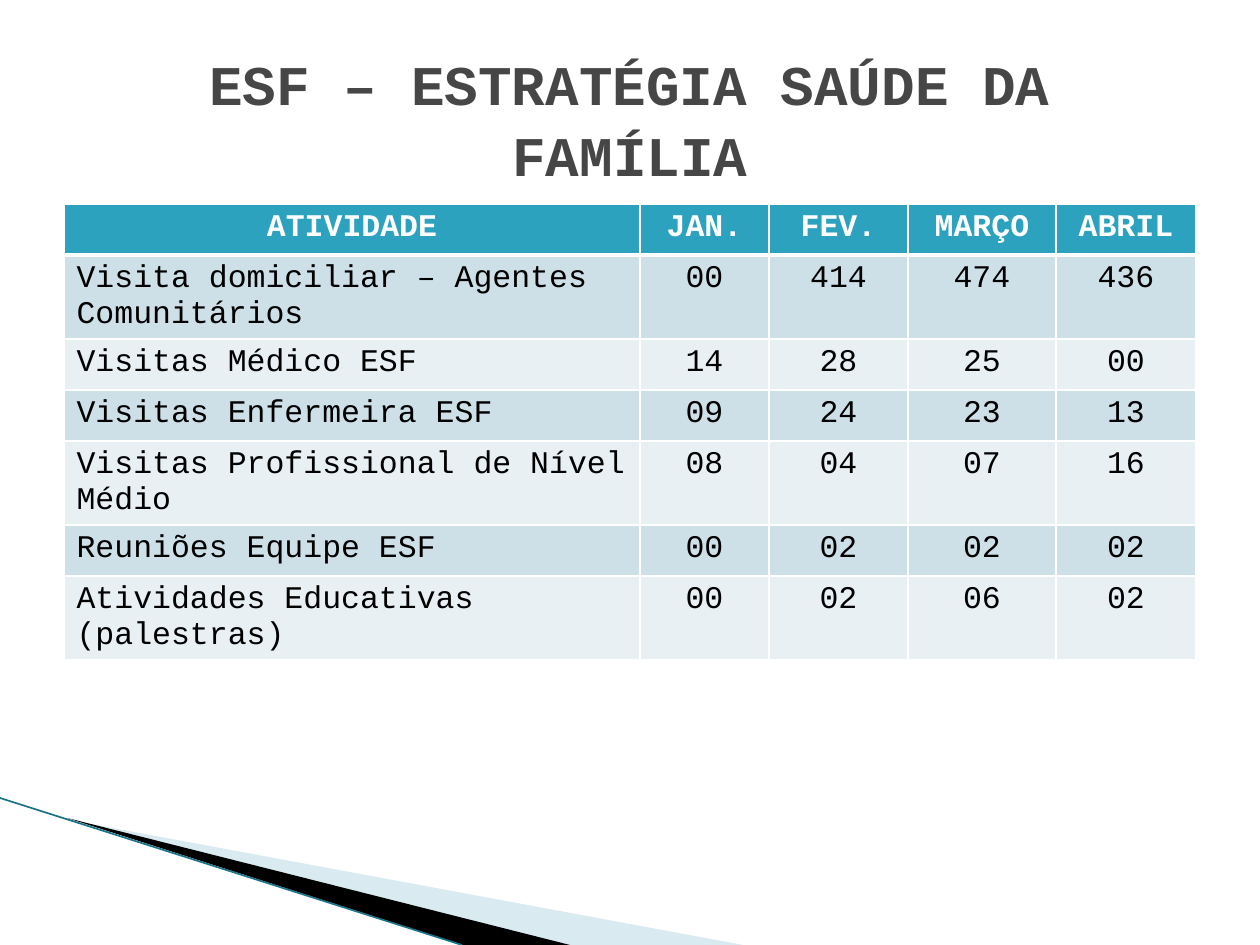
import pptx
import pptx.util
import pptx.dml.color
import pptx.enum.shapes
import pptx.enum.text
import pptx.oxml
import pptx.oxml.ns

SCALE = 914400 / 126  # EMU per px
FONT = "Courier New"
COLORS = {
    "title": "464646", "header": "2DA2BF", "band_dark": "CDE0E8",
    "band_light": "E8F0F4", "white": "FFFFFF", "black": "000000",
    "wedge": "A0CBDC", "edge": "1B7388",
}


def px(length):
    return pptx.util.Emu(round(length * SCALE))


def add_run(paragraph, text, size, color, bold):
    paragraph.alignment = pptx.enum.text.PP_ALIGN.CENTER
    run = paragraph.add_run()
    run.text = text
    run.font.name = FONT
    run.font.size = pptx.util.Pt(size)
    run.font.bold = bold
    run.font.color.rgb = pptx.dml.color.RGBColor.from_string(COLORS[color])


presentation = pptx.Presentation()
presentation.slide_width = px(1260)
presentation.slide_height = px(945)
slide = presentation.slides.add_slide(presentation.slide_layouts[5])

# Corner wedges
wedges = [
    ("wedge", 40, [(69, 820), (743, 945), (570, 945)]),
    ("black", 100, [(67, 818), (570, 945), (463, 945)]),
]
for color, opacity, points in wedges:
    builder = slide.shapes.build_freeform(*points[0], scale=SCALE)
    builder.add_line_segments(points[1:], close=True)
    shape = builder.convert_to_shape()
    shape.shadow.inherit = False
    shape.line.fill.background()
    shape.fill.solid()
    shape.fill.fore_color.rgb = pptx.dml.color.RGBColor.from_string(COLORS[color])
    if opacity < 100:
        fill_color = shape.element.spPr.find(".//" + pptx.oxml.ns.qn("a:srgbClr"))
        alpha = pptx.oxml.parse_xml(
            f'<a:alpha {pptx.oxml.ns.nsdecls("a")} val="{opacity * 1000}"/>')
        fill_color.append(alpha)

# Thin line along the wedges
edge = slide.shapes.add_connector(
    pptx.enum.shapes.MSO_CONNECTOR.STRAIGHT, px(0), px(798), px(462), px(945))
edge.line.color.rgb = pptx.dml.color.RGBColor.from_string(COLORS["edge"])
edge.line.width = pptx.util.Pt(0.95)
edge.element.spPr.append(
    pptx.oxml.parse_xml(f'<a:effectLst {pptx.oxml.ns.nsdecls("a")}/>'))

# Title
title = slide.shapes.title
title.left, title.top, title.width, title.height = px(63), px(38), px(1134), px(158)
title.text_frame.word_wrap = True
title.text_frame.vertical_anchor = pptx.enum.text.MSO_ANCHOR.MIDDLE
title.text_frame.paragraphs[0].line_spacing = 1.06
add_run(title.text_frame.paragraphs[0], "ESF – ESTRATÉGIA SAÚDE DA FAMÍLIA", 32, "title", True)

# Activity table
rows = [
    ("ATIVIDADE", "JAN.", "FEV.", "MARÇO", "ABRIL"),
    ("Visita domiciliar – Agentes Comunitários", "00", "414", "474", "436"),
    ("Visitas Médico ESF", "14", "28", "25", "00"),
    ("Visitas Enfermeira ESF", "09", "24", "23", "13"),
    ("Visitas Profissional de Nível Médio", "08", "04", "07", "16"),
    ("Reuniões Equipe ESF", "00", "02", "02", "02"),
    ("Atividades Educativas (palestras)", "00", "02", "06", "02"),
]
column_widths = [576, 129, 139, 148, 140]
row_height = 51
table = slide.shapes.add_table(
    len(rows), len(column_widths), px(64), px(204),
    px(sum(column_widths)), px(row_height * len(rows))).table
for column, width in zip(table.columns, column_widths):
    column.width = px(width)

for row_index, values in enumerate(rows):
    table.rows[row_index].height = px(row_height)
    is_header = row_index == 0
    band = "header" if is_header else "band_dark" if row_index % 2 else "band_light"
    for column_index, value in enumerate(values):
        cell = table.cell(row_index, column_index)
        paragraph = cell.text_frame.paragraphs[0]
        add_run(paragraph, value, 18, "white" if is_header else "black", is_header)
        if column_index == 0 and not is_header:
            paragraph.alignment = pptx.enum.text.PP_ALIGN.LEFT

        # White borders, thicker under the header
        properties = cell._tc.get_or_add_tcPr()
        for side in ("L", "R", "T", "B"):
            under_header = (row_index, side) in ((0, "B"), (1, "T"))
            width = pptx.util.Pt(3 if under_header else 1)
            properties.append(pptx.oxml.parse_xml(
                f'<a:ln{side} {pptx.oxml.ns.nsdecls("a")} w="{width}"><a:solidFill>'
                f'<a:srgbClr val="{COLORS["white"]}"/></a:solidFill></a:ln{side}>'))
        cell.fill.solid()
        cell.fill.fore_color.rgb = pptx.dml.color.RGBColor.from_string(COLORS[band])

presentation.save("out.pptx")
